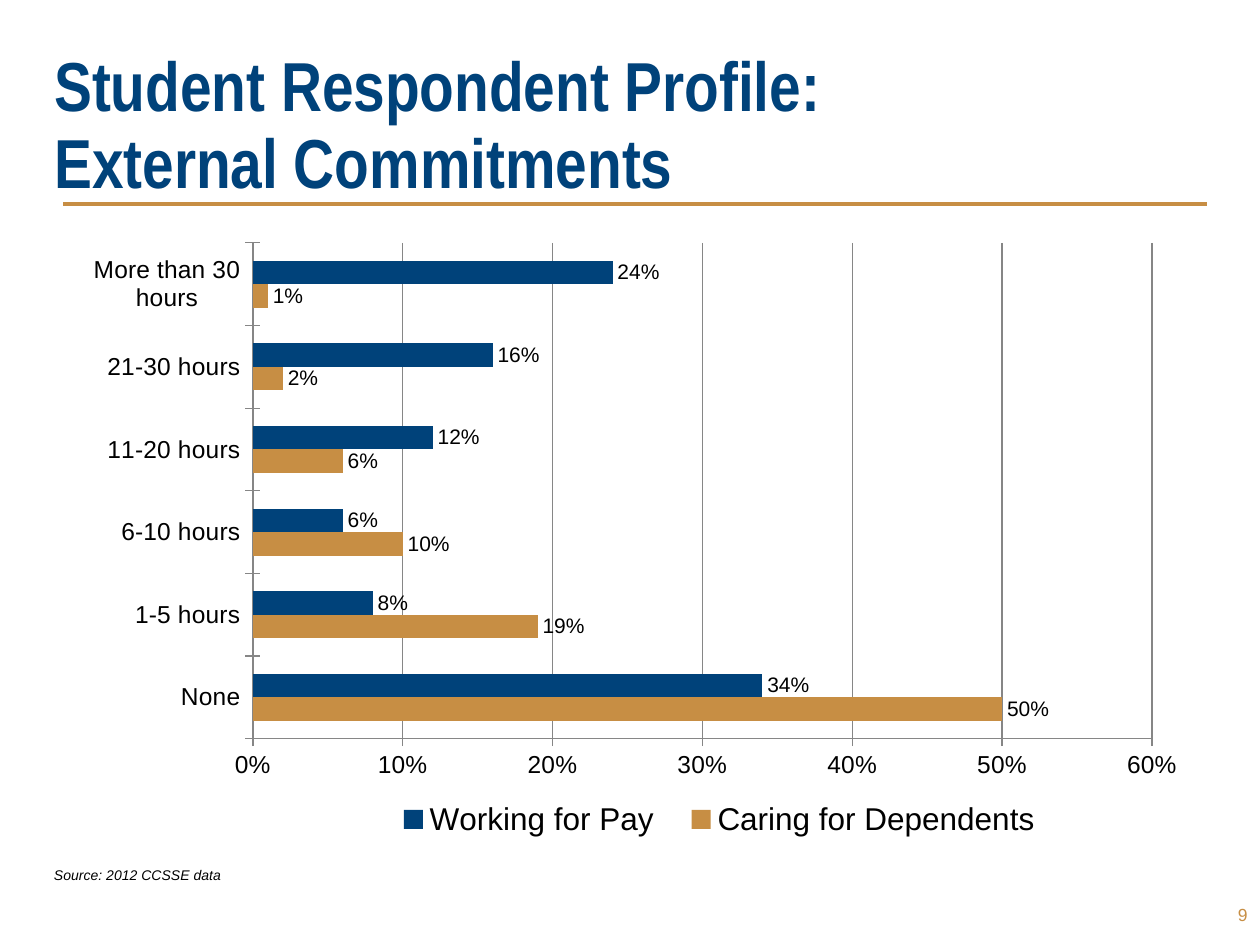
from lxml import etree
from pptx import Presentation
from pptx.chart.data import CategoryChartData
from pptx.dml.color import RGBColor
from pptx.enum.chart import (XL_CHART_TYPE, XL_LABEL_POSITION,
                             XL_LEGEND_POSITION, XL_TICK_MARK)
from pptx.enum.shapes import MSO_CONNECTOR
from pptx.enum.text import MSO_ANCHOR, PP_ALIGN
from pptx.oxml import parse_xml
from pptx.oxml.ns import nsdecls, qn
from pptx.util import Inches, Pt

NAVY = RGBColor(0x00, 0x42, 0x7A)
GOLD = RGBColor(0xC7, 0x8E, 0x44)
BLACK = RGBColor(0x00, 0x00, 0x00)
GREY = RGBColor(0x86, 0x86, 0x86)

CATEGORIES = ["None", "1-5 hours", "6-10 hours", "11-20 hours",
              "21-30 hours", "More than 30 hours"]
SERIES = [
    ("Caring for Dependents", [0.5, 0.19, 0.1, 0.06, 0.02, 0.01], GOLD),
    ("Working for Pay", [0.34, 0.08, 0.06, 0.12, 0.16, 0.24], NAVY),
]


def style_font(font, size, color=BLACK, name="Arial"):
    font.name = name
    font.size = Pt(size)
    font.color.rgb = color


def add_title(page, left, top, width, height):
    title = page.shapes.title
    title.left, title.top, title.width, title.height = left, top, width, height
    frame = title.text_frame
    frame.text = "Student Respondent Profile: \vExternal Commitments"
    frame.vertical_anchor = MSO_ANCHOR.BOTTOM
    para = frame.paragraphs[0]
    para.alignment = PP_ALIGN.LEFT
    para.line_spacing = Pt(44)
    for span in para.runs:
        style_font(span.font, 39.6, NAVY, "Arial Narrow")
        span.font.bold = True


def add_rule(page, left, top, width):
    rule = page.shapes.add_connector(MSO_CONNECTOR.STRAIGHT,
                                     left, top, left + width, top)
    rule.line.color.rgb = GOLD
    rule.line.width = Pt(2.25)
    etree.SubElement(rule._element.spPr, qn("a:effectLst"))


def add_note(page, text, left, top, width, height, size, color):
    box = page.shapes.add_textbox(left, top, width, height)
    frame = box.text_frame
    frame.word_wrap = True
    frame.text = text
    para = frame.paragraphs[0]
    style_font(para.runs[0].font, size, color)
    return frame


def set_layout(parent, x, y, width, height, inner=False):
    """Fix a chart part at fractions of the chart's width and height."""
    target = '<c:layoutTarget val="inner"/>' if inner else ""
    layout = parse_xml(
        f'<c:layout {nsdecls("c")}><c:manualLayout>{target}'
        '<c:xMode val="edge"/><c:yMode val="edge"/>'
        f'<c:x val="{x}"/><c:y val="{y}"/><c:w val="{width}"/><c:h val="{height}"/>'
        '</c:manualLayout></c:layout>')
    for old in parent.findall(qn("c:layout")):
        parent.remove(old)
    position = 0 if inner else 1
    parent.insert(position, layout)


def style_axis(axis):
    style_font(axis.tick_labels.font, 14)
    axis.major_tick_mark = XL_TICK_MARK.CROSS
    axis.minor_tick_mark = XL_TICK_MARK.NONE
    axis.format.line.color.rgb = GREY


def add_hours_chart(page, left, top, width, height):
    data = CategoryChartData(number_format="0%")
    data.categories = CATEGORIES
    for name, values, _ in SERIES:
        data.add_series(name, values)
    chart = page.shapes.add_chart(XL_CHART_TYPE.BAR_CLUSTERED,
                                  left, top, width, height, data).chart
    chart.has_title = False
    style_font(chart.font, 18)

    style_axis(chart.category_axis)
    values_axis = chart.value_axis
    style_axis(values_axis)
    values_axis.minimum_scale, values_axis.maximum_scale = 0, 0.6
    values_axis.major_unit = 0.1
    values_axis.tick_labels.number_format = "0%"
    values_axis.tick_labels.number_format_is_linked = False
    values_axis.major_gridlines.format.line.color.rgb = GREY

    plot = chart.plots[0]
    plot.vary_by_categories = False
    plot.gap_width = 150
    for series, (_, _, color) in zip(plot.series, SERIES):
        series.format.fill.solid()
        series.format.fill.fore_color.rgb = color
        labels = series.data_labels
        labels.show_value = True
        labels.number_format = "0%"
        labels.number_format_is_linked = False
        labels.position = XL_LABEL_POSITION.OUTSIDE_END
        style_font(labels.font, 12)

    chart.has_legend = True
    chart.legend.position = XL_LEGEND_POSITION.BOTTOM
    chart.legend.include_in_layout = False
    style_font(chart.legend.font, 18)
    set_layout(chart._chartSpace.chart.plotArea, 0.16, 0.02, 0.8, 0.8, inner=True)
    set_layout(chart.legend._element, 0.27, 0.91, 0.61, 0.08)


def build_slide(deck):
    page = deck.slides.add_slide(deck.slide_layouts[5])
    add_rule(page, Inches(0.5), Inches(1.62), Inches(9.08))
    add_title(page, Inches(0.33), Inches(0.53), Inches(9.33), Inches(1.13))
    number = add_note(page, "9", Inches(9.33), Inches(7.08),
                      Inches(0.67), Inches(0.35), 10, GOLD)
    number.vertical_anchor = MSO_ANCHOR.MIDDLE
    number.paragraphs[0].alignment = PP_ALIGN.RIGHT
    source = add_note(page, "Source: 2012 CCSSE data", Inches(0.33), Inches(6.83),
                      Inches(2), Inches(0.24), 8, BLACK)
    source.paragraphs[0].runs[0].font.italic = True
    add_hours_chart(page, Inches(0.58), Inches(1.83), Inches(8.92), Inches(4.92))


def main():
    deck = Presentation()
    deck.slide_width, deck.slide_height = Inches(10), Inches(7.5)
    build_slide(deck)
    deck.save("out.pptx")


if __name__ == "__main__":
    main()
